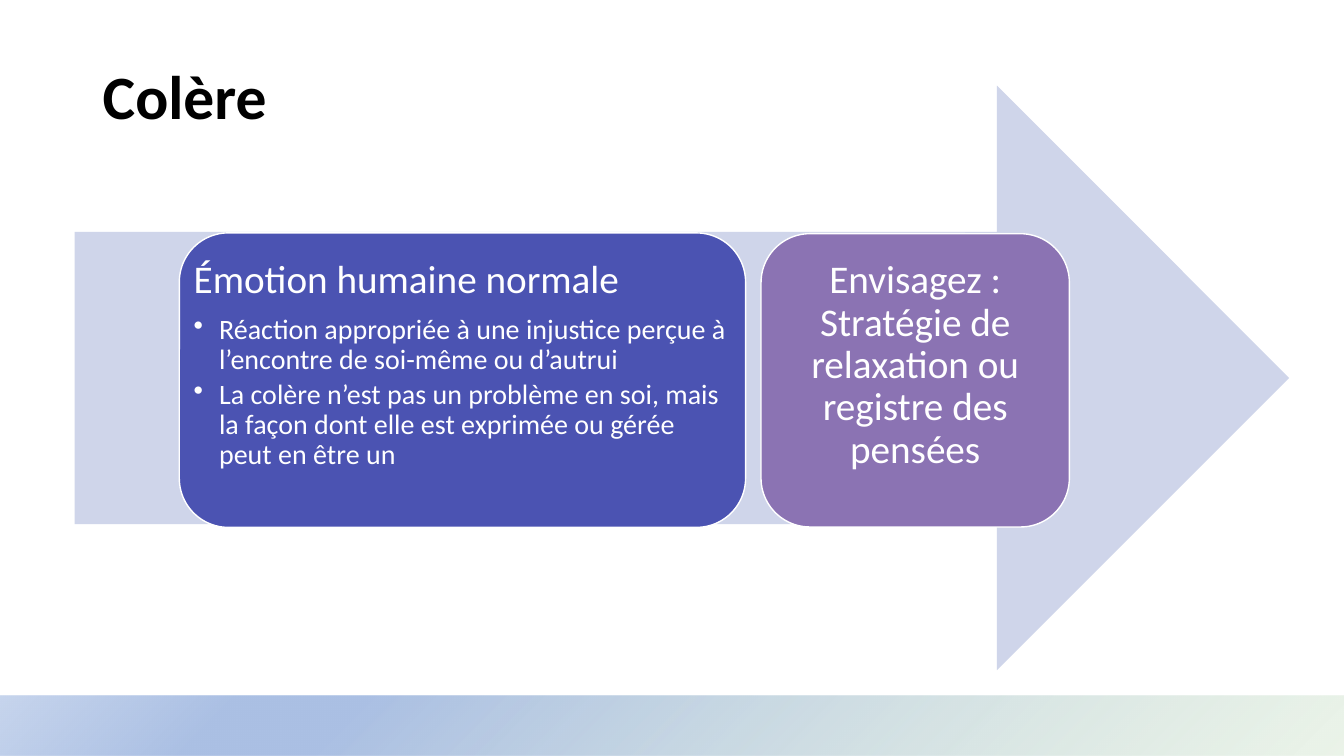
import pptx
import pptx.util
import pptx.oxml
import pptx.oxml.ns
import pptx.dml.color
import pptx.enum.shapes
import pptx.enum.text

Cm, Pt = pptx.util.Cm, pptx.util.Pt
Kind = pptx.enum.shapes.MSO_SHAPE
Side = pptx.enum.text.PP_ALIGN
Anchor = pptx.enum.text.MSO_ANCHOR

TITLE = "Colère"
# Each line: style, text
NORMAL = [
    ("head", "Émotion humaine normale"),
    ("item", "Réaction appropriée à une injustice perçue à l’encontre de soi-même ou d’autrui"),
    ("item", "La colère n’est pas un problème en soi, mais la façon dont elle "
             "est exprimée ou gérée peut en être un"),
]
PLAN = [("mid", "Envisagez : Stratégie de relaxation ou registre des pensées")]

THEME = {
    "font": "Calibri",
    "arrow": "CFD5EA",
    "blue": "4B53B2",
    "plum": "8B73B3",
    "white": "FFFFFF",
    "black": "000000",
    # Stop, colour, opacity (percent)
    "band": [(0, "D6E8D1", 47), (74, "ABC0E4", 100), (83, "ABC0E4", 100), (100, "C7D5ED", 100)],
    "title": {"size": Pt(44), "bold": True},
    "large": {"size": Pt(28)},
    "small": {"size": Pt(20)},
}
STYLES = {
    "title": ("title", {"alignment": Side.LEFT}),
    "head": ("large", {"alignment": Side.LEFT, "space_after": Pt(9.8)}),
    "item": ("small", {"alignment": Side.LEFT, "space_after": Pt(3), "level": 1}),
    "mid": ("large", {"alignment": Side.CENTER, "space_after": Pt(9.8)}),
}

# Left, top, width, height in cm
WIDE, HIGH = 33.87, 19.05
BAND = (0, 17.53, WIDE, HIGH - 17.53)
HEAD = (2.34, 0.66, 29.21, 3.68)
ARROW = (1.88, 2.16, 30.61, 14.73)
# Lines, fill, place, side inset in cm
CARDS = [
    (NORMAL, "blue", (4.52, 5.87, 14.27, 7.42), 0),
    (PLAN, "plum", (19.18, 5.89, 7.77, 7.39), 0.3),
]
PAD = 0.3
INDENT = 0.64


def color(name):
    return pptx.dml.color.RGBColor.from_string(THEME[name])


def apply(target, values):
    for name, value in values.items():
        setattr(target, name, value)


def draw(slide, kind, place, fill=None):
    shape = slide.shapes.add_shape(kind, *map(Cm, place))
    shape.shadow.inherit = False
    shape.line.fill.background()
    if fill:
        shape.fill.solid()
        shape.fill.fore_color.rgb = color(fill)
    return shape


def blend(shape, stops):
    """Fill with a round gradient centred on the lower right corner."""
    parts = "".join(
        f'<a:gs pos="{at * 1000}"><a:srgbClr val="{tint}">'
        f'<a:alpha val="{alpha * 1000}"/></a:srgbClr></a:gs>'
        for at, tint, alpha in stops)
    grad = pptx.oxml.parse_xml(
        f'<a:gradFill {pptx.oxml.ns.nsdecls("a")} rotWithShape="1"><a:gsLst>{parts}</a:gsLst>'
        '<a:path path="circle"><a:fillToRect l="100000" t="100000"/></a:path></a:gradFill>')
    shape.fill.background()
    props = shape._element.spPr
    props.replace(props.find(pptx.oxml.ns.qn("a:noFill")), grad)


def bullet(para):
    props = para._p.get_or_add_pPr()
    props.set("marL", str(Cm(INDENT)))
    props.set("indent", str(-Cm(INDENT)))
    props.append(pptx.oxml.parse_xml(
        f'<a:buChar {pptx.oxml.ns.nsdecls("a")} char="•"/>'))


def write(frame, lines, tint):
    frame.word_wrap = True
    for pos, (style, text) in enumerate(lines):
        para = frame.add_paragraph() if pos else frame.paragraphs[0]
        size, form = STYLES[style]
        apply(para, {"line_spacing": 0.9, **form})
        if style == "item":
            bullet(para)
        run = para.add_run()
        run.text = text
        apply(run.font, {"name": THEME["font"], **THEME[size]})
        run.font.color.rgb = color(tint)


def card(slide, lines, fill, place, side):
    shape = draw(slide, Kind.ROUNDED_RECTANGLE, place, fill)
    shape.line.color.rgb = color("white")
    shape.line.width = Pt(1)
    apply(shape.text_frame, {
        "vertical_anchor": Anchor.TOP,
        "margin_left": Cm(side), "margin_right": Cm(side),
        "margin_top": Cm(PAD), "margin_bottom": Cm(PAD),
    })
    write(shape.text_frame, lines, "white")


def main():
    deck = pptx.Presentation()
    apply(deck, {"slide_width": Cm(WIDE), "slide_height": Cm(HIGH)})
    slide = deck.slides.add_slide(deck.slide_layouts[6])
    blend(draw(slide, Kind.RECTANGLE, BAND), THEME["band"])
    frame = slide.shapes.add_textbox(*map(Cm, HEAD)).text_frame
    frame.vertical_anchor = Anchor.MIDDLE
    write(frame, [("title", TITLE)], "black")
    draw(slide, Kind.RIGHT_ARROW, ARROW, "arrow")
    for item in CARDS:
        card(slide, *item)
    deck.save("out.pptx")


if __name__ == "__main__":
    main()
